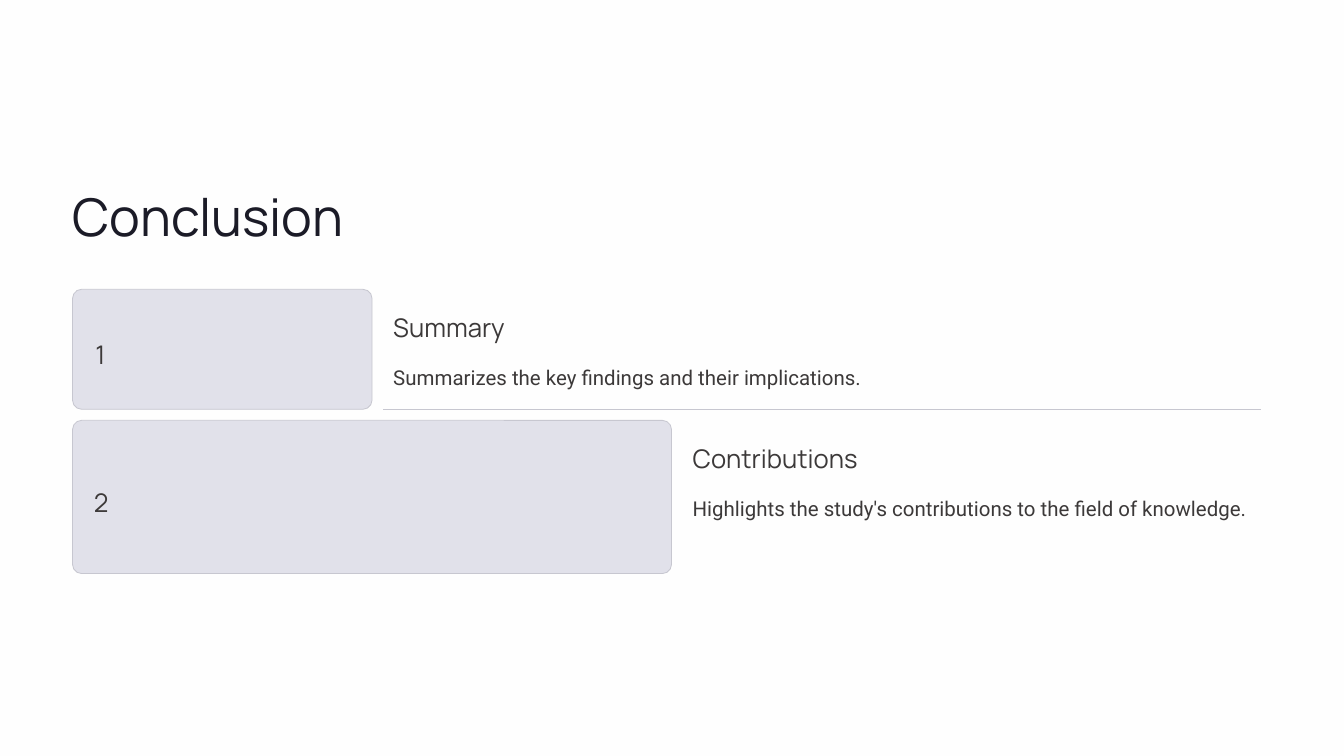
from dataclasses import dataclass

from lxml import etree
from pptx import Presentation
from pptx import util as u
from pptx.dml.color import RGBColor
from pptx.enum import shapes, text
from pptx.oxml import ns


@dataclass(frozen=True)
class Style:
    font: str
    size: float
    leading: float
    color: str


@dataclass(frozen=True)
class Theme:
    background: str = "FEFEFE"
    card: str = "E1E1EA"
    rule: str = "C7C7D0"
    title: Style = Style("Manrope", 37.1, 46.2, "1B1B27")
    number: Style = Style("Manrope", 18.3, 29.6, "3C3939")
    heading: Style = Style("Manrope", 18.3, 22.9, "3C3939")
    body: Style = Style("Roboto", 14.6, 23.8, "3C3939")


@dataclass(frozen=True)
class Step:
    number: str
    heading: str
    body: str
    top: float
    width: float
    height: float
    number_width: float
    body_width: float
    body_height: float
    wrap: bool


THEME = Theme()
MARGIN = 0.72
RIGHT = 12.51
RADIUS = 0.09
NUMBER_HEIGHT = 0.41
STEPS = (
    Step("1", "Summary", "Summarizes the key findings and their implications.",
         2.87, 2.97, 1.19, 0.11, 4.73, 0.33, False),
    Step("2", "Contributions",
         "Highlights the study's contributions to the field of knowledge.",
         4.17, 5.94, 1.52, 0.13, 5.53, 0.66, True),
)


def place_text(slide, wording: str, *, left: float, top: float, width: float,
               height: float, style: Style, align=text.PP_ALIGN.LEFT,
               wrap: bool = False, holder=None) -> None:
    box = (u.Inches(left), u.Inches(top), u.Inches(width), u.Inches(height))
    if holder is None:
        holder = slide.shapes.add_textbox(*box)
    holder.left, holder.top, holder.width, holder.height = box
    frame = holder.text_frame
    frame.margin_left = frame.margin_top = 0
    frame.margin_right = frame.margin_bottom = 0
    frame.auto_size = text.MSO_AUTO_SIZE.NONE
    frame.vertical_anchor = text.MSO_ANCHOR.TOP
    frame.word_wrap = wrap
    paragraph = frame.paragraphs[0]
    paragraph.alignment = align
    paragraph.line_spacing = u.Pt(style.leading)
    run = paragraph.add_run()
    run.text = wording
    run.font.name = style.font
    run.font.size = u.Pt(style.size)
    run.font.color.rgb = RGBColor.from_string(style.color)


def draw_step(slide, step: Step) -> None:
    card = slide.shapes.add_shape(
        shapes.MSO_SHAPE.ROUNDED_RECTANGLE, u.Inches(MARGIN), u.Inches(step.top),
        u.Inches(step.width), u.Inches(step.height))
    card.adjustments[0] = RADIUS / step.height
    card.shadow.inherit = False
    card.fill.solid()
    card.fill.fore_color.rgb = RGBColor.from_string(THEME.card)
    card.line.color.rgb = RGBColor.from_string(THEME.rule)
    card.line.width = u.Pt(0.6)

    place_text(slide, step.number, left=MARGIN + 0.22,
               top=step.top + (step.height - NUMBER_HEIGHT) / 2,
               width=step.number_width, height=NUMBER_HEIGHT,
               style=THEME.number, align=text.PP_ALIGN.CENTER)
    text_left = MARGIN + step.width + 0.21
    place_text(slide, step.heading, left=text_left, top=step.top + 0.21,
               width=2.58, height=0.32, style=THEME.heading)
    place_text(slide, step.body, left=text_left, top=step.top + 0.66,
               width=step.body_width, height=step.body_height,
               style=THEME.body, wrap=step.wrap)


def draw_divider(slide, left: float, y: float) -> None:
    divider = slide.shapes.add_connector(
        shapes.MSO_CONNECTOR.STRAIGHT, u.Inches(left), u.Inches(y),
        u.Inches(RIGHT), u.Inches(y))
    divider.line.color.rgb = RGBColor.from_string(THEME.rule)
    divider.line.width = u.Pt(1)
    etree.SubElement(divider._element.spPr, ns.qn("a:effectLst"))


def main() -> None:
    deck = Presentation()
    deck.slide_width, deck.slide_height = u.Inches(13.33), u.Inches(7.5)
    slide = deck.slides.add_slide(deck.slide_layouts[5])
    slide.background.fill.solid()
    slide.background.fill.fore_color.rgb = RGBColor.from_string(THEME.background)
    place_text(slide, "Conclusion", left=MARGIN, top=1.81, width=5.17,
               height=0.65, style=THEME.title, holder=slide.shapes.title)
    for step in STEPS:
        draw_step(slide, step)
    summary = STEPS[0]
    draw_divider(slide, MARGIN + summary.width + 0.11,
                 summary.top + summary.height)
    deck.save("out.pptx")


if __name__ == "__main__":
    main()
